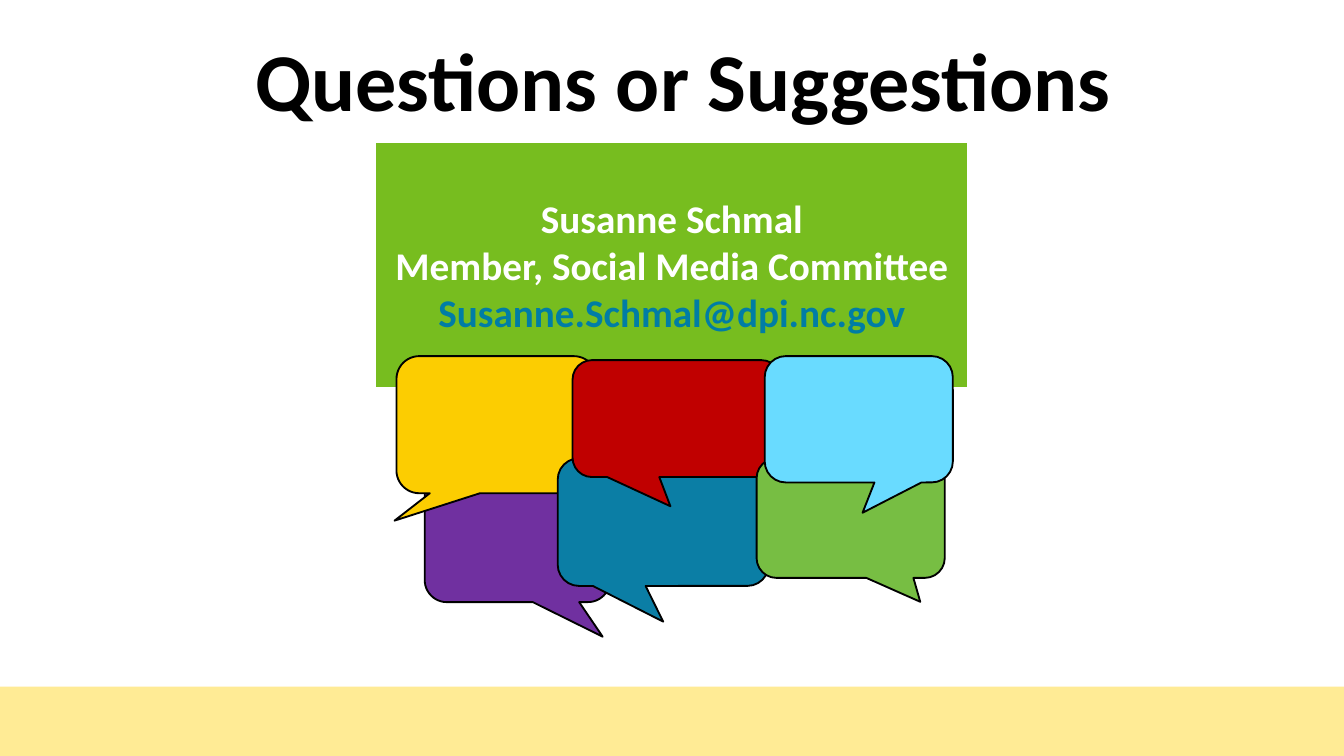
from dataclasses import dataclass

from pptx import Presentation
from pptx import util as u
from pptx.dml.color import RGBColor
from pptx.enum import shapes, text


@dataclass(frozen=True)
class Theme:
    font: str = "Calibri"
    title_size: float = 44
    contact_size: float = 21
    ink: str = "000000"
    paper: str = "FFFFFF"
    band: str = "FFEB95"
    panel: str = "77BD1F"
    link: str = "007DA5"
    purple: str = "7030A0"
    yellow: str = "FCCD01"
    blue: str = "0B7EA5"
    red: str = "C00000"
    green: str = "77BE43"
    sky: str = "69DBFF"


@dataclass(frozen=True)
class Box:
    """Left, top, width and height in grid columns and rows."""
    col: float
    row: float
    cols: float
    rows: float


@dataclass(frozen=True)
class Bubble:
    box: Box
    tail: tuple[float, float]
    fill: str


THEME = Theme()
CELL = u.Inches(0.1)
COLS, ROWS = 100, 56.25

# Back to front
BUBBLES = [
    Bubble(Box(31.6, 34.9, 13.8, 9.9), (0.46, 0.76), THEME.purple),
    Bubble(Box(29.5, 26.5, 14.9, 10.2), (-0.51, 0.7), THEME.yellow),
    Bubble(Box(41.5, 34.1, 15.7, 9.5), (0, 0.78), THEME.blue),
    Bubble(Box(42.6, 26.8, 15.5, 8.7), (-0.03, 0.75), THEME.red),
    Bubble(Box(56.3, 34.1, 14, 8.9), (0.37, 0.7), THEME.green),
    Bubble(Box(56.9, 26.5, 14, 9.4), (0.02, 0.74), THEME.sky),
]
CONTACT = [
    ("Susanne Schmal", THEME.paper),
    ("Member, Social Media Committee", THEME.paper),
    ("Susanne.Schmal@dpi.nc.gov", THEME.link),
]


def emu(box: Box) -> list[int]:
    return [round(n * CELL) for n in (box.col, box.row, box.cols, box.rows)]


def set_font(p, size: float, color: str) -> None:
    p.alignment = text.PP_ALIGN.CENTER
    p.font.name = THEME.font
    p.font.size = u.Pt(size)
    p.font.bold = True
    p.font.color.rgb = RGBColor.from_string(color)


def add_filled(slide, kind, box: Box, fill: str, line: str | None = None,
               weight: float = 1):
    sp = slide.shapes.add_shape(kind, *emu(box))
    sp.shadow.inherit = False
    sp.fill.solid()
    sp.fill.fore_color.rgb = RGBColor.from_string(fill)
    if line:
        sp.line.color.rgb = RGBColor.from_string(line)
        sp.line.width = u.Pt(weight)
    else:
        sp.line.fill.background()
    return sp


def add_title(slide, box: Box, words: str) -> None:
    sp = slide.shapes.title
    sp.left, sp.top, sp.width, sp.height = emu(box)
    tf = sp.text_frame
    tf.text = words
    tf.auto_size = text.MSO_AUTO_SIZE.NONE
    tf.vertical_anchor = text.MSO_ANCHOR.TOP
    p = tf.paragraphs[0]
    p.line_spacing = 0.9
    set_font(p, THEME.title_size, THEME.ink)


def add_contact(slide, box: Box) -> None:
    sp = add_filled(slide, shapes.MSO_SHAPE.RECTANGLE, box, THEME.panel,
                    THEME.paper, 3)
    tf = sp.text_frame
    tf.word_wrap = True
    tf.vertical_anchor = text.MSO_ANCHOR.MIDDLE
    tf.margin_left = tf.margin_right = u.Inches(0.06)
    tf.margin_top = tf.margin_bottom = u.Inches(0.03)
    tf.text = "\n".join(words for words, _ in CONTACT)
    for p, (_, color) in zip(tf.paragraphs, CONTACT):
        set_font(p, THEME.contact_size, color)


def add_bubble(slide, bubble: Bubble) -> None:
    sp = add_filled(slide, shapes.MSO_SHAPE.ROUNDED_RECTANGULAR_CALLOUT,
                    bubble.box, bubble.fill, THEME.ink)
    sp.adjustments[0], sp.adjustments[1] = bubble.tail


def main() -> None:
    prs = Presentation()
    prs.slide_width, prs.slide_height = round(COLS * CELL), round(ROWS * CELL)
    slide = prs.slides.add_slide(prs.slide_layouts[5])

    # Footer band
    band_top = 51.1
    add_filled(slide, shapes.MSO_SHAPE.RECTANGLE,
               Box(0, band_top, COLS, ROWS - band_top), THEME.band)

    # Title and contact panel
    add_title(slide, Box(2.9, 2.5, 95.9, 9.4), "Questions or Suggestions")
    add_contact(slide, Box(27.8, 10.4, 44.4, 18.6))

    # Speech bubbles
    for bubble in BUBBLES:
        add_bubble(slide, bubble)

    prs.save("out.pptx")


if __name__ == "__main__":
    main()
